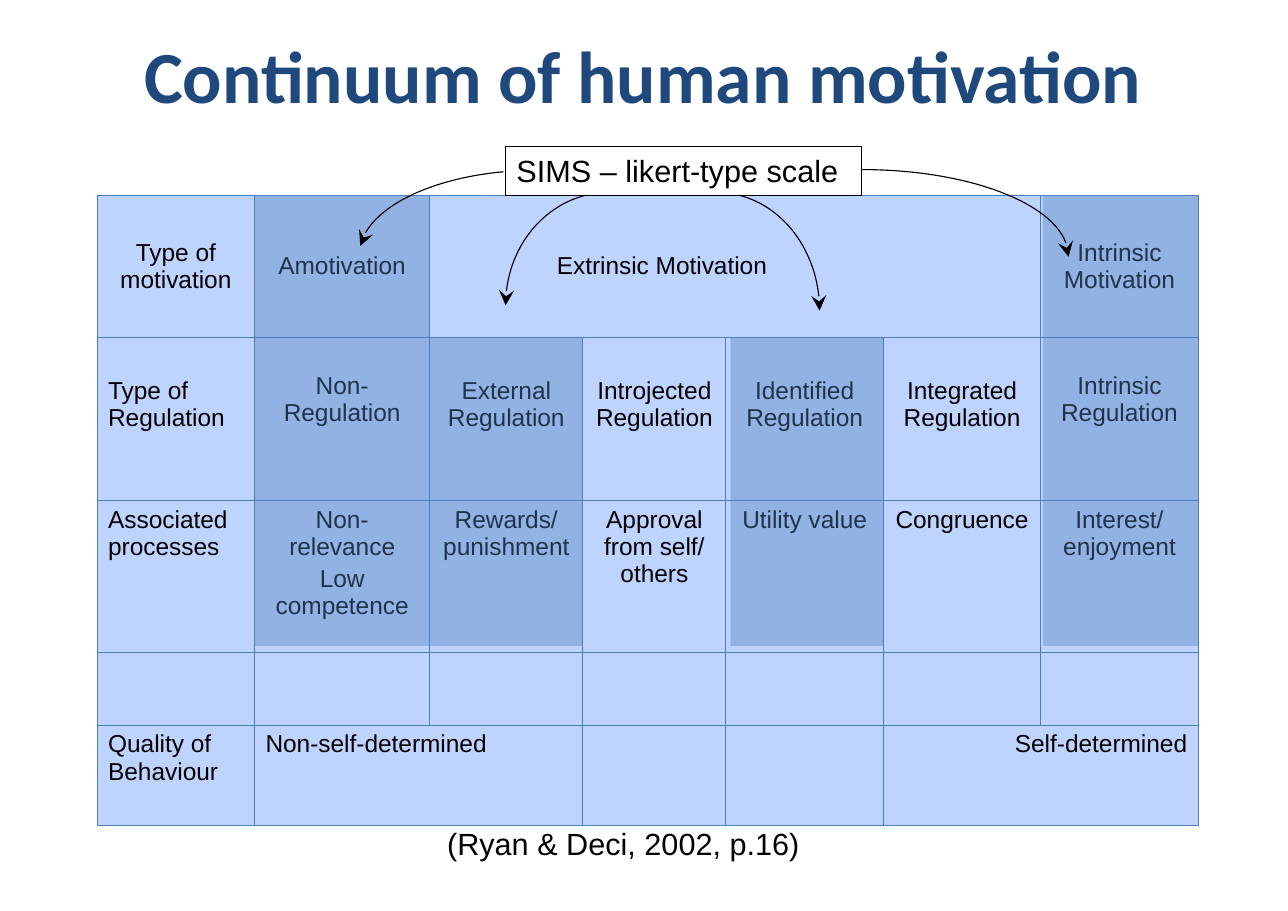
from dataclasses import dataclass

from lxml import etree
from pptx import Presentation, util as u
from pptx.dml.color import RGBColor
from pptx.enum import shapes, text
from pptx.oxml.ns import qn


@dataclass(frozen=True)
class Theme:
    title_color: str = "1F497D"
    ink: str = "000000"
    cell: str = "BFD3FF"
    border: str = "4B7EBC"
    highlight: str = "4F81BD"
    highlight_alpha: int = 40
    title_font: str = "Calibri"
    body_font: str = "Arial"
    title_size: int = 48
    label_size: int = 20
    cell_size: int = 16
    rule: float = 0.75


@dataclass(frozen=True)
class Box:
    left: float
    top: float
    width: float
    height: float

    def lengths(self):
        return [u.Cm(v) for v in (self.left, self.top, self.width, self.height)]


THEME = Theme()
LEFT, CENTER, RIGHT = text.PP_ALIGN.LEFT, text.PP_ALIGN.CENTER, text.PP_ALIGN.RIGHT

COLUMNS = [3.63, 4.04, 3.53, 3.3, 3.63, 3.63, 3.63]
ROWS = [3.28, 3.76, 3.5, 1.68, 2.31]
CONTENT = [
    ["Type of motivation", "Amotivation", "Extrinsic Motivation", "", "", "", "Intrinsic Motivation"],
    ["Type of Regulation", "Non-Regulation", "External Regulation", "Introjected Regulation",
     "Identified Regulation", "Integrated Regulation", "Intrinsic Regulation"],
    ["Associated processes", "Non-relevance\nLow competence", "Rewards/ punishment",
     "Approval from self/ others", "Utility value", "Congruence", "Interest/ enjoyment"],
    [""] * 7,
    ["Quality of Behaviour", "Non-self-determined", "", "", "", "Self-determined", ""],
]
MERGES = [(0, 2, 5), (4, 1, 2), (4, 5, 6)]
ALIGNMENTS = {(0, 2): LEFT, (1, 0): LEFT, (2, 0): LEFT, (4, 0): LEFT, (4, 1): LEFT, (4, 5): RIGHT}
HIGHLIGHTS = [(1, 0, 0), (2, 1, 0), (4, 1, 0.1), (6, 0, 0.05)]
ARCS = [
    [(-0.05, 0.58), (-1.78, 0.74), (-3.15, 1.42), (-3.35, 2.29)],
    [(5.38, 1.12), (6.48, 1.4), (7.24, 2.51), (7.24, 3.78)],
    [(1.85, 1.12), (0.76, 1.4), (0, 2.44), (0, 3.66)],
    [(8.2, 0.53), (10.85, 0.53), (12.98, 1.42), (12.98, 2.54)],
]


def write(frame, wording, size, align, font=THEME.body_font, color=THEME.ink, bold=False):
    frame.word_wrap = True
    for index, line in enumerate(wording.split("\n")):
        paragraph = frame.add_paragraph() if index else frame.paragraphs[0]
        paragraph.alignment = align
        if index:
            paragraph.space_before = u.Pt(size * 0.2)
        run = paragraph.add_run()
        run.text = line
        run.font.size = u.Pt(size)
        run.font.name = font
        run.font.bold = bold
        run.font.color.rgb = RGBColor.from_string(color)


def outline(shape):
    shape.shadow.inherit = False
    shape.fill.background()
    shape.line.color.rgb = RGBColor.from_string(THEME.ink)
    shape.line.width = u.Pt(THEME.rule)


def add_title(slide, box):
    frame = slide.shapes.add_textbox(*box.lengths()).text_frame
    frame.vertical_anchor = text.MSO_ANCHOR.MIDDLE
    write(frame, "Continuum of human motivation", THEME.title_size, CENTER,
          THEME.title_font, THEME.title_color, True)


def add_citation(slide, box):
    frame = slide.shapes.add_textbox(*box.lengths()).text_frame
    write(frame, "(Ryan & Deci, 2002, p.16) ", THEME.label_size, RIGHT)


def style_cell(cell):
    properties = cell._tc.get_or_add_tcPr()
    for side in ("a:lnL", "a:lnR", "a:lnT", "a:lnB"):
        edge = etree.SubElement(properties, qn(side), w=str(u.Pt(THEME.rule)))
        fill = etree.SubElement(edge, qn("a:solidFill"))
        etree.SubElement(fill, qn("a:srgbClr"), val=THEME.border)
    cell.fill.solid()
    cell.fill.fore_color.rgb = RGBColor.from_string(THEME.cell)


def add_continuum(slide, box):
    table = slide.shapes.add_table(len(ROWS), len(COLUMNS), *box.lengths()).table
    table.first_row = table.horz_banding = False
    for column, width in zip(table.columns, COLUMNS):
        column.width = u.Cm(width)
    for row, height in zip(table.rows, ROWS):
        row.height = u.Cm(height)
    for row, first, last in MERGES:
        table.cell(row, first).merge(table.cell(row, last))
    for r, wordings in enumerate(CONTENT):
        for c, wording in enumerate(wordings):
            cell = table.cell(r, c)
            style_cell(cell)
            if r == 0:
                cell.vertical_anchor = text.MSO_ANCHOR.MIDDLE
            if r == 1:
                cell.margin_top = u.Cm(0.8 if c in (1, 6) else 0.92)
            if wording:
                write(cell.text_frame, wording, THEME.cell_size, ALIGNMENTS.get((r, c), CENTER))
    table.cell(0, 2).margin_left = u.Cm(2.93)


def add_highlights(slide, box):
    bottom = box.top + sum(ROWS[:3]) - 0.15
    for column, row, inset in HIGHLIGHTS:
        left = box.left + sum(COLUMNS[:column]) + inset
        top = box.top + sum(ROWS[:row])
        area = Box(left, top, COLUMNS[column] - inset, bottom - top)
        band = slide.shapes.add_shape(shapes.MSO_SHAPE.RECTANGLE, *area.lengths())
        band.shadow.inherit = False
        band.line.fill.background()
        band.fill.solid()
        band.fill.fore_color.rgb = RGBColor.from_string(THEME.highlight)
        tint = band._element.spPr.find(qn("a:solidFill")).find(qn("a:srgbClr"))
        etree.SubElement(tint, qn("a:alpha"), val=str(THEME.highlight_alpha * 1000))


def curve(points, steps=32):
    for step in range(steps + 1):
        t = step / steps
        weights = ((1 - t) ** 3, 3 * t * (1 - t) ** 2, 3 * t * t * (1 - t), t ** 3)
        yield tuple(sum(w * p[axis] for w, p in zip(weights, points)) for axis in (0, 1))


def add_scale_callout(slide, box):
    callout = slide.shapes.add_group_shape().shapes
    label = callout.add_shape(shapes.MSO_SHAPE.RECTANGLE, *box.lengths())
    outline(label)
    label.text_frame.vertical_anchor = text.MSO_ANCHOR.TOP
    write(label.text_frame, "SIMS – likert-type scale", THEME.label_size, LEFT)
    for controls in ARCS:
        start, *rest = [(u.Cm(box.left + x), u.Cm(box.top + y)) for x, y in curve(controls)]
        builder = callout.build_freeform(*start, scale=1.0)
        builder.add_line_segments(rest, close=False)
        arc = builder.convert_to_shape()
        outline(arc)
        etree.SubElement(arc.line._get_or_add_ln(), qn("a:tailEnd"),
                         type="stealth", w="lg", len="lg")


def main():
    deck = Presentation()
    deck.slide_width, deck.slide_height = u.Cm(29.7), u.Cm(21)
    slide = deck.slides.add_slide(deck.slide_layouts[6])
    continuum = Box(2.24, 4.5, sum(COLUMNS), sum(ROWS))
    add_continuum(slide, continuum)
    add_highlights(slide, continuum)
    add_title(slide, Box(1.47, 0.84, 26.72, 1.73))
    add_citation(slide, Box(6.93, 18.9, 11.96, 1.09))
    add_scale_callout(slide, Box(11.66, 3.38, 8.2, 1.12))
    deck.save("out.pptx")


if __name__ == "__main__":
    main()
